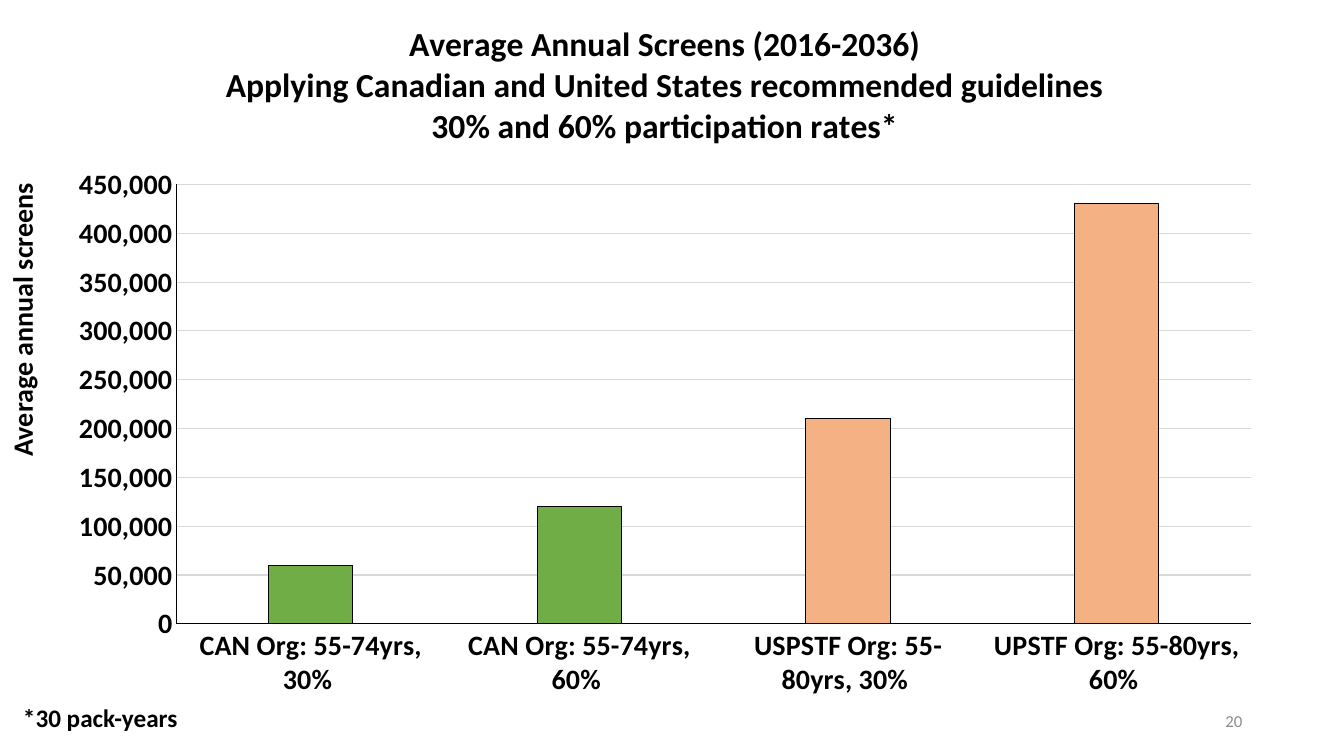
from lxml.etree import SubElement
from pptx import Presentation
from pptx.chart.data import CategoryChartData
from pptx.dml.color import RGBColor
from pptx.enum.chart import XL_CHART_TYPE, XL_TICK_MARK
from pptx.enum.text import MSO_ANCHOR, PP_ALIGN
from pptx.oxml.ns import qn
from pptx.util import Inches, Pt

BLACK = RGBColor(0x00, 0x00, 0x00)
GRAY = RGBColor(0x8C, 0x8C, 0x8C)
GRID = RGBColor(0xD9, 0xD9, 0xD9)
GREEN = RGBColor(0x70, 0xAD, 0x47)
ORANGE = RGBColor(0xF4, 0xB1, 0x83)
FONT = "Calibri"
CHART_WIDTH, CHART_HEIGHT = 12.11, 7.07


def set_font(font, size, color=BLACK, bold=True):
    font.name, font.size, font.bold = FONT, Pt(size), bold
    font.color.rgb = color


def place(parent, index, **inches):
    """Fix a chart part's position, in inches from the chart's corner."""
    layout = parent.find(qn("c:layout"))
    if layout is not None:
        parent.remove(layout)
    layout = SubElement(parent, qn("c:layout"))
    parent.insert(index, layout)
    manual = SubElement(layout, qn("c:manualLayout"))
    if "w" in inches:
        SubElement(manual, qn("c:layoutTarget")).set("val", "inner")
    for mode in ("xMode", "yMode"):
        SubElement(manual, qn(f"c:{mode}")).set("val", "edge")
    for key, length in inches.items():
        full = CHART_WIDTH if key in "xw" else CHART_HEIGHT
        SubElement(manual, qn(f"c:{key}")).set("val", str(length / full))


prs = Presentation()
prs.slide_width, prs.slide_height = Inches(13.33), Inches(7.5)
slide = prs.slides.add_slide(prs.slide_layouts[6])

# Chart of screens per guideline and participation rate
screens = CategoryChartData(number_format="#,##0")
screens.categories = [
    "CAN Org: 55-74yrs, 30% ",
    "CAN Org: 55-74yrs, 60% ",
    "USPSTF Org: 55-80yrs, 30% ",
    "UPSTF Org: 55-80yrs, 60% ",
]
screens.add_series("Series 1", (60000, 120000, 210000, 430000))
chart = slide.shapes.add_chart(
    XL_CHART_TYPE.COLUMN_CLUSTERED, Inches(0.54), Inches(0),
    Inches(CHART_WIDTH), Inches(CHART_HEIGHT), screens).chart
chart.has_legend = False
set_font(chart.font, 10, bold=False)

# Chart title
title_lines = [
    "Average Annual Screens (2016-2036)",
    "Applying Canadian and United States recommended guidelines",
    "30% and 60% participation rates*",
]
title = chart.chart_title
title.text_frame.text = "\n".join(title_lines)
for line in title.text_frame.paragraphs:
    line.alignment = PP_ALIGN.CENTER
    set_font(line.font, 24)
title.include_in_layout = False
place(title._element, 1, x=1.67, y=0.2)
place(chart._chartSpace.chart.plotArea, 0, x=1.21, y=1.83, w=10.66, h=4.36)

# Axes
for axis in (chart.category_axis, chart.value_axis):
    axis.major_tick_mark = axis.minor_tick_mark = XL_TICK_MARK.NONE
    set_font(axis.tick_labels.font, 20)
    axis.format.line.color.rgb = BLACK
    axis.format.line.width = Pt(0.75)
count_axis = chart.value_axis
count_axis.minimum_scale, count_axis.maximum_scale = 0, 450000
count_axis.major_unit = 50000
count_axis.tick_labels.number_format = "#,##0"
count_axis.tick_labels.number_format_is_linked = False
count_axis.major_gridlines.format.line.color.rgb = GRID
count_axis.major_gridlines.format.line.width = Pt(0.75)

# Bars: green for Canada, orange for the United States
bars = chart.plots[0]
bars.gap_width, bars.overlap = 219, -27
bars.vary_by_categories = False
for index, color in enumerate((GREEN, GREEN, ORANGE, ORANGE)):
    bar = bars.series[0].points[index].format
    bar.fill.solid()
    bar.fill.fore_color.rgb = color
    bar.line.color.rgb = BLACK
    bar.line.width = Pt(0.75)

# Axis caption, footnote and slide number
captions = [
    ("Average annual screens ", 0, 1.69, 0.54, 2.9, 20, BLACK, True, PP_ALIGN.CENTER, "vert270"),
    ("*30 pack-years", 0.13, 6.92, 1.9, 0.58, 18, BLACK, True, PP_ALIGN.LEFT, "horz"),
    ("20", 9.42, 6.95, 3, 0.4, 12, GRAY, False, PP_ALIGN.RIGHT, "horz"),
]
for text, left, top, width, height, size, color, bold, align, direction in captions:
    box = slide.shapes.add_textbox(Inches(left), Inches(top), Inches(width), Inches(height))
    frame = box.text_frame
    frame.word_wrap = direction == "horz"
    frame.vertical_anchor = MSO_ANCHOR.MIDDLE if align == PP_ALIGN.RIGHT else MSO_ANCHOR.TOP
    frame._txBody.bodyPr.set("vert", direction)
    caption = frame.paragraphs[0]
    caption.text = text
    caption.alignment = align
    set_font(caption.font, size, color, bold)

prs.save("out.pptx")
